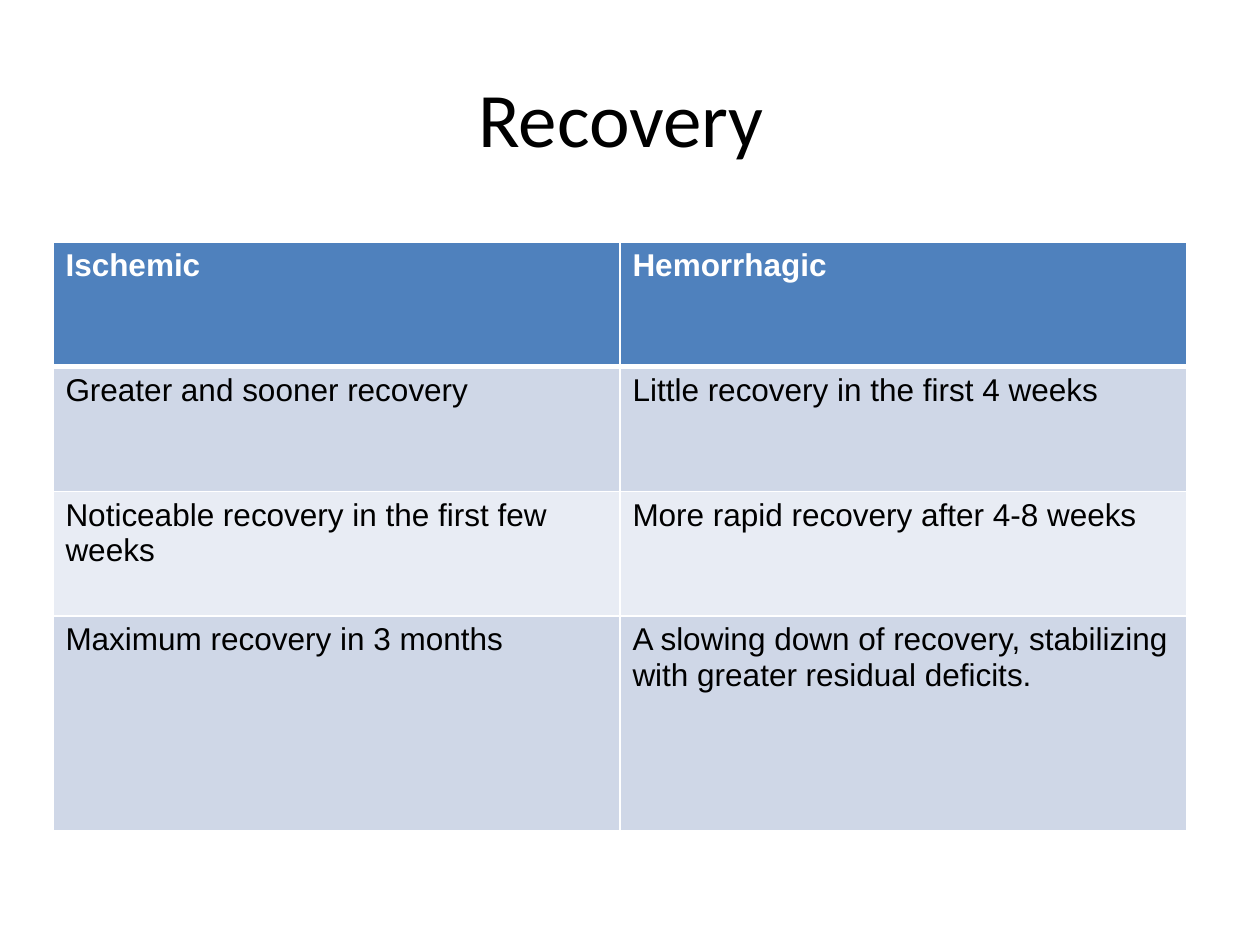
from lxml import etree
from pptx import Presentation
from pptx.dml.color import RGBColor
from pptx.enum.text import MSO_ANCHOR, PP_ALIGN
from pptx.oxml.ns import qn
from pptx.util import Inches, Pt

MIDDLE, TOP = MSO_ANCHOR.MIDDLE, MSO_ANCHOR.TOP
LEFT, CENTER = PP_ALIGN.LEFT, PP_ALIGN.CENTER

WIDE, HIGH = Inches(10), Inches(7.5)
COLORS = {"ink": "000000", "white": "FFFFFF", "head": "4F81BD",
          "odd": "CFD7E7", "even": "E8ECF4"}
ROWS = [
    ("Ischemic", "Hemorrhagic"),
    ("Greater and sooner recovery", "Little recovery in the first 4 weeks"),
    ("Noticeable recovery in the first few weeks",
     "More rapid recovery after 4-8 weeks"),
    ("Maximum recovery in 3 months",
     "A slowing down of recovery, stabilizing with greater residual deficits."),
]
SHARES = [0.99, 0.99, 0.99, 1.7]


def area(left, top, width, height):
    """Turn shares of the slide's size into a box."""
    return (int(left * WIDE), int(top * HIGH),
            int(width * WIDE), int(height * HIGH))


def write(frame, text, size=18, font="Arial", color="ink", bold=False,
          align=LEFT):
    frame.word_wrap = True
    para = frame.paragraphs[0]
    para.alignment = align
    run = para.add_run()
    run.text = text
    run.font.size = Pt(size)
    run.font.name = font
    run.font.bold = bold
    run.font.color.rgb = RGBColor.from_string(COLORS[color])


def border(cell, **sides):
    """Draw white cell borders; sides maps L, R, T and B to points."""
    props = cell._tc.get_or_add_tcPr()
    for side, points in sides.items():
        line = etree.SubElement(props, qn(f"a:ln{side}"), w=str(Pt(points)))
        fill = etree.SubElement(line, qn("a:solidFill"))
        etree.SubElement(fill, qn("a:srgbClr"), val=COLORS["white"])


def add_title(slide, box, text):
    frame = slide.shapes.add_textbox(*box).text_frame
    frame.vertical_anchor = MIDDLE
    write(frame, text, size=44, font="Calibri", align=CENTER)


def add_grid(slide, box, rows, shares):
    """Fill the box with a table whose row heights follow the shares."""
    table = slide.shapes.add_table(len(rows), len(rows[0]), *box).table
    for col in table.columns:
        col.width = box[2] // len(rows[0])
    for r, (texts, share) in enumerate(zip(rows, shares)):
        table.rows[r].height = int(box[3] * share / sum(shares))
        head = r == 0
        shade = "head" if head else "odd" if r % 2 else "even"
        for c, text in enumerate(texts):
            cell = table.cell(r, c)
            cell.vertical_anchor = TOP
            border(cell, L=1, R=1, T=3 if r == 1 else 1, B=3 if head else 1)
            cell.fill.solid()
            cell.fill.fore_color.rgb = RGBColor.from_string(COLORS[shade])
            write(cell.text_frame, text, bold=head,
                  color="white" if head else "ink")


def main():
    deck = Presentation()
    deck.slide_width, deck.slide_height = WIDE, HIGH
    slide = deck.slides.add_slide(deck.slide_layouts[6])
    add_title(slide, area(0.05, 0.04, 0.9, 1 / 6), "Recovery ")
    add_grid(slide, area(0.042, 0.256, 0.9, sum(SHARES) / 7.5), ROWS, SHARES)
    deck.save("out.pptx")


if __name__ == "__main__":
    main()
